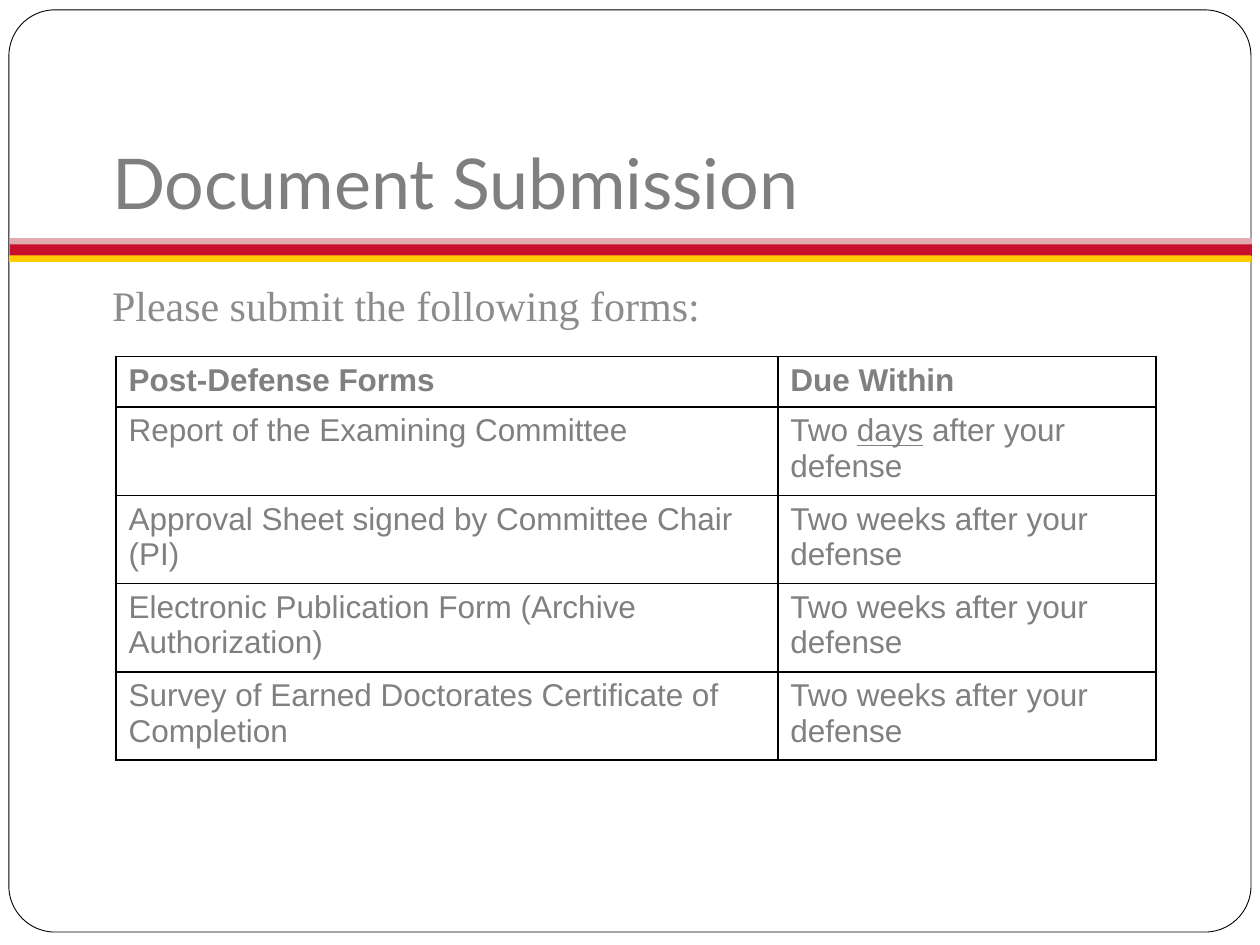
from lxml.etree import SubElement
from pptx import Presentation
from pptx.dml.color import RGBColor
from pptx.enum.shapes import MSO_SHAPE as Preset
from pptx.enum.text import MSO_ANCHOR as Anchor
from pptx.oxml.ns import qn
from pptx.util import Cm, Pt

TITLE = "Document Submission"
LEAD = "Please submit the following forms:"
WEEKS = ["Two weeks after your defense"]
ROWS = [
    (["Post-Defense Forms"], ["Due Within"]),
    (["Report of the Examining Committee"], ["Two ", "days", " after your defense"]),
    (["Approval Sheet signed by Committee Chair (PI)"], WEEKS),
    (["Electronic Publication Form (Archive Authorization)"], WEEKS),
    (["Survey of Earned Doctorates Certificate of Completion"], WEEKS),
]
UNDERLINED = "days"
STRIPES = [
    (0.2, 4.9, 0.26, "C8102E"),
    (0.2, 4.8, 0.13, "E0ABAD"),
    (0.18, 5.15, 0.13, "FFCD00"),
]
FRAME_WIDTH = 25.04
COLUMN_WIDTHS = [13.34, 7.62]
HEADER_HEIGHT, ROW_HEIGHT = 0.97, 1.68
TEXT_LEFT, TEXT_WIDTH = 2.01, 21.59


def color(value):
    return RGBColor.from_string(value)


def add_shape(page, preset, left, top, width, height, fill):
    shape = page.shapes.add_shape(preset, Cm(left), Cm(top), Cm(width), Cm(height))
    shape.shadow.inherit = False
    shape.fill.solid()
    shape.fill.fore_color.rgb = color(fill)
    shape.line.fill.background()
    return shape


def add_span(para, text, font, size, tint, bold=False):
    span = para.add_run()
    span.text = text
    span.font.name = font
    span.font.size = Pt(size)
    span.font.bold = bold
    span.font.color.rgb = color(tint)
    return span


def add_text(page, top, height, anchor, text, font, size, tint):
    box = page.shapes.add_textbox(Cm(TEXT_LEFT), Cm(top), Cm(TEXT_WIDTH), Cm(height))
    frame = box.text_frame
    frame.word_wrap = True
    frame.vertical_anchor = anchor
    add_span(frame.paragraphs[0], text, font, size, tint)
    return frame


def add_borders(cell):
    properties = cell._tc.get_or_add_tcPr()
    for position, side in enumerate(("lnL", "lnR", "lnT", "lnB")):
        line = SubElement(properties, qn(f"a:{side}"), w=str(Pt(1)))
        fill = SubElement(line, qn("a:solidFill"))
        SubElement(fill, qn("a:srgbClr"), val="000000")
        properties.insert(position, line)


def add_forms(page):
    heights = [HEADER_HEIGHT] + [ROW_HEIGHT] * (len(ROWS) - 1)
    table = page.shapes.add_table(
        len(ROWS), len(COLUMN_WIDTHS), Cm(2.34), Cm(7.19),
        Cm(sum(COLUMN_WIDTHS)), Cm(sum(heights)),
    ).table
    for column, width in zip(table.columns, COLUMN_WIDTHS):
        column.width = Cm(width)
    for row, height in zip(table.rows, heights):
        row.height = Cm(height)
    for row_index, row in enumerate(ROWS):
        for column_index, texts in enumerate(row):
            cell = table.cell(row_index, column_index)
            cell.fill.background()
            add_borders(cell)
            para = cell.text_frame.paragraphs[0]
            for text in texts:
                span = add_span(para, text, "Arial", 18, "808080", row_index == 0)
                span.font.underline = text == UNDERLINED


def main():
    deck = Presentation()
    deck.slide_width, deck.slide_height = Cm(25.4), Cm(19.05)
    page = deck.slides.add_slide(deck.slide_layouts[6])

    border = add_shape(page, Preset.ROUNDED_RECTANGLE, 0.18, 0.2, FRAME_WIDTH, 18.59, "FFFFFF")
    border.adjustments[0] = 0.05
    border.line.color.rgb = color("000000")
    border.line.width = Pt(0.5)
    for left, top, height, fill in STRIPES:
        add_shape(page, Preset.RECTANGLE, left, top, FRAME_WIDTH, height, fill)

    title = add_text(page, 0.97, 3.78, Anchor.BOTTOM, TITLE, "Lato", 40, "7F7F7F")
    title.margin_bottom = Cm(0.25)
    lead = add_text(page, 5.51, 1.5, Anchor.TOP, LEAD, "Times New Roman", 24, "8C8C8C")
    lead.paragraphs[0].space_before = Pt(5.8)
    add_forms(page)
    deck.save("out.pptx")


if __name__ == "__main__":
    main()
